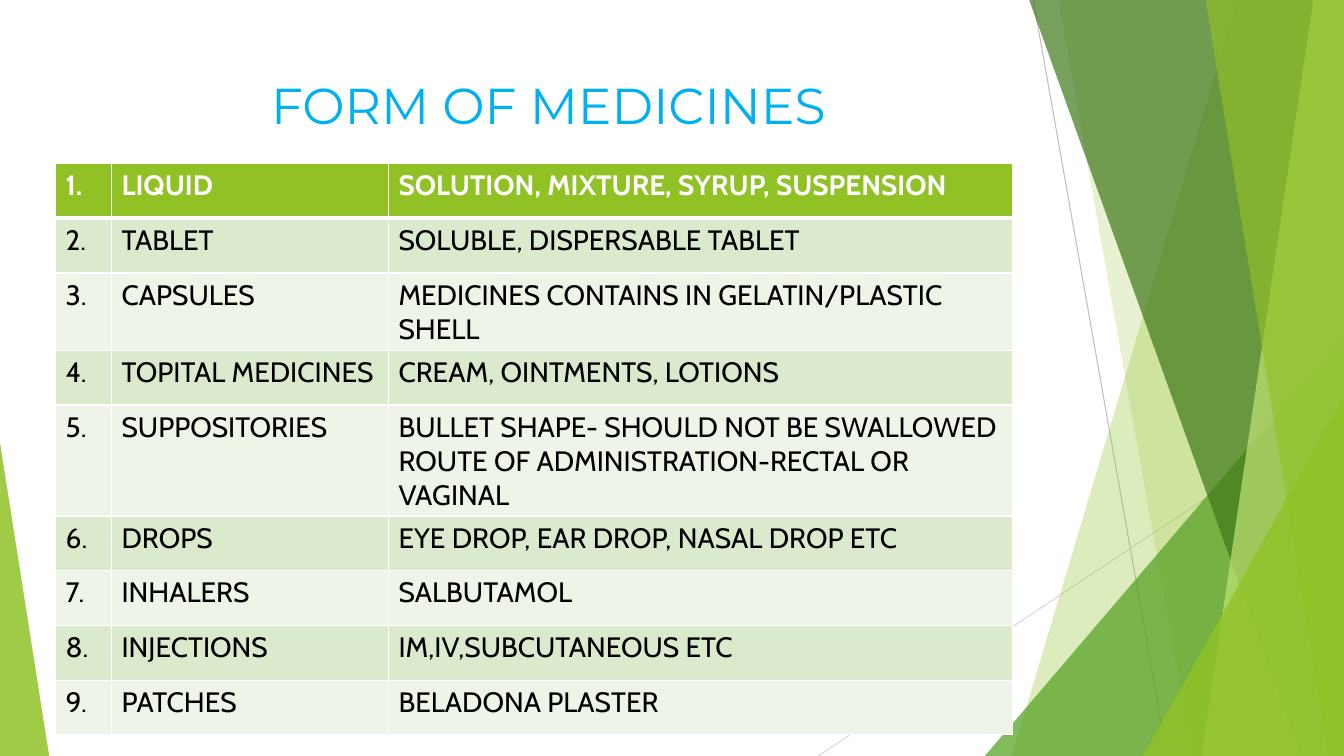
from lxml import etree
from pptx import Presentation, util as u
from pptx.dml.color import RGBColor
from pptx.enum import shapes, text
from pptx.oxml import parse_xml
from pptx.oxml.ns import nsdecls, qn

Cm, Pt = u.Cm, u.Pt
WIDTH, HEIGHT = 33.87, 19.05


def paint(fill, colour, opacity=100):
    """Fill with a solid hex colour at an opacity in percent."""
    fill.solid()
    fill.fore_color.rgb = RGBColor.from_string(colour)
    if opacity < 100:
        tone = fill._xPr.find(qn("a:solidFill"))[0]
        etree.SubElement(tone, qn("a:alpha"), val=str(opacity * 1000))


def write(paragraph, words, font, size, colour, bold=False):
    span = paragraph.add_run()
    span.text = words
    span.font.name = font
    span.font.size = Pt(size)
    span.font.bold = bold
    paint(span.font.fill, colour)


deck = Presentation()
deck.slide_width, deck.slide_height = Cm(WIDTH), Cm(HEIGHT)
page = deck.slides.add_slide(deck.slide_layouts[6])

# Thin lines behind the green facets
for x1, y1, x2, y2, colour in [
    (26.04, 0, 29.41, HEIGHT, "BFBFBF"),
    (WIDTH, 10.24, 20.62, HEIGHT, "D9D9D9"),
]:
    line = page.shapes.add_connector(
        shapes.MSO_CONNECTOR.STRAIGHT, Cm(x1), Cm(y1), Cm(x2), Cm(y2))
    line.line.width = Pt(0.75)
    paint(line.line.fill, colour)
    etree.SubElement(line._element.spPr, qn("a:effectLst"))

# Panels (top x, bottom x) reach the right edge;
# triangles (left, top, width, apex) stand on the bottom edge
facets = [
    ((31.19, 25.5), "90C226", 30),
    ((26.67, 30.05), "90C226", 20),
    ((24.82, 8.46, 9.05, 1), "54A021", 72),
    ((25.93, 32.79), "3F7819", 70),
    ((33.1, 30.28), "C0E474", 70),
    ((30.38, 33.48), "90C226", 65),
    ((28.81, 9.98, 5.06, 1), "90C226", 80),
    ((0, 11.15, 1.24, 0), "90C226", 85),
]
for outline, colour, opacity in facets:
    if len(outline) == 2:
        top_x, bottom_x = outline
        builder = page.shapes.build_freeform(Cm(top_x), Cm(-0.02))
        builder.add_line_segments([
            (Cm(WIDTH), Cm(-0.02)), (Cm(WIDTH), Cm(HEIGHT)), (Cm(bottom_x), Cm(HEIGHT))])
        facet = builder.convert_to_shape()
    else:
        left, top, width, apex = outline
        facet = page.shapes.add_shape(
            shapes.MSO_SHAPE.ISOSCELES_TRIANGLE,
            Cm(left), Cm(top), Cm(width), Cm(HEIGHT - top))
        facet.adjustments[0] = apex
    facet.shadow.inherit = False
    facet.line.fill.background()
    paint(facet.fill, colour, opacity)

# Title
title = page.shapes.add_textbox(Cm(1.88), Cm(1.7), Cm(23.88), Cm(1.85))
title.text_frame.word_wrap = True
title.text_frame.vertical_anchor = text.MSO_ANCHOR.MIDDLE
heading = title.text_frame.paragraphs[0]
heading.alignment = text.PP_ALIGN.CENTER
write(heading, "FORM OF MEDICINES", "Montserrat", 36, "00B0F0")

# Table of medicine forms, numbered by row
medicines = [
    ("LIQUID", "SOLUTION, MIXTURE, SYRUP, SUSPENSION"),
    ("TABLET", "SOLUBLE, DISPERSABLE TABLET"),
    ("CAPSULES", "MEDICINES CONTAINS IN GELATIN/PLASTIC SHELL"),
    ("TOPITAL MEDICINES", "CREAM, OINTMENTS, LOTIONS"),
    ("SUPPOSITORIES",
     "BULLET SHAPE- SHOULD NOT BE SWALLOWED\nROUTE OF ADMINISTRATION-RECTAL OR VAGINAL"),
    ("DROPS", "EYE DROP, EAR DROP, NASAL DROP ETC"),
    ("INHALERS", "SALBUTAMOL"),
    ("INJECTIONS", "IM,IV,SUBCUTANEOUS ETC"),
    ("PATCHES", "BELADONA PLASTER"),
]
row_height = 1.38
table = page.shapes.add_table(
    len(medicines), 3, Cm(1.4), Cm(4.12), Cm(24.11), Cm(row_height * len(medicines))).table
for column, width in zip(table.columns, (1.41, 6.98, 15.72)):
    column.width = Cm(width)

for number, medicine in enumerate(medicines, 1):
    is_header = number == 1
    row = table.rows[number - 1]
    row.height = Cm(2.39 if "\n" in medicine[1] else row_height)
    band = "90C226" if is_header else ("EEF4E8", "DBE9CD")[number % 2 == 0]
    for cell, words in zip(row.cells, (f"{number}.", *medicine)):
        for index, part in enumerate(words.split("\n")):
            frame = cell.text_frame
            paragraph = frame.add_paragraph() if index else frame.paragraphs[0]
            write(paragraph, part, "Cabin", 20, "FFFFFF" if is_header else "000000", is_header)
        paint(cell.fill, band)
        for position, side in enumerate("LRTB"):
            thick = (is_header and side == "B") or (number == 2 and side == "T")
            border = parse_xml(
                f'<a:ln{side} {nsdecls("a")} w="{Pt(3 if thick else 1)}">'
                '<a:solidFill><a:srgbClr val="FFFFFF"/></a:solidFill>'
                f'</a:ln{side}>')
            cell._tc.get_or_add_tcPr().insert(position, border)

deck.save("out.pptx")
